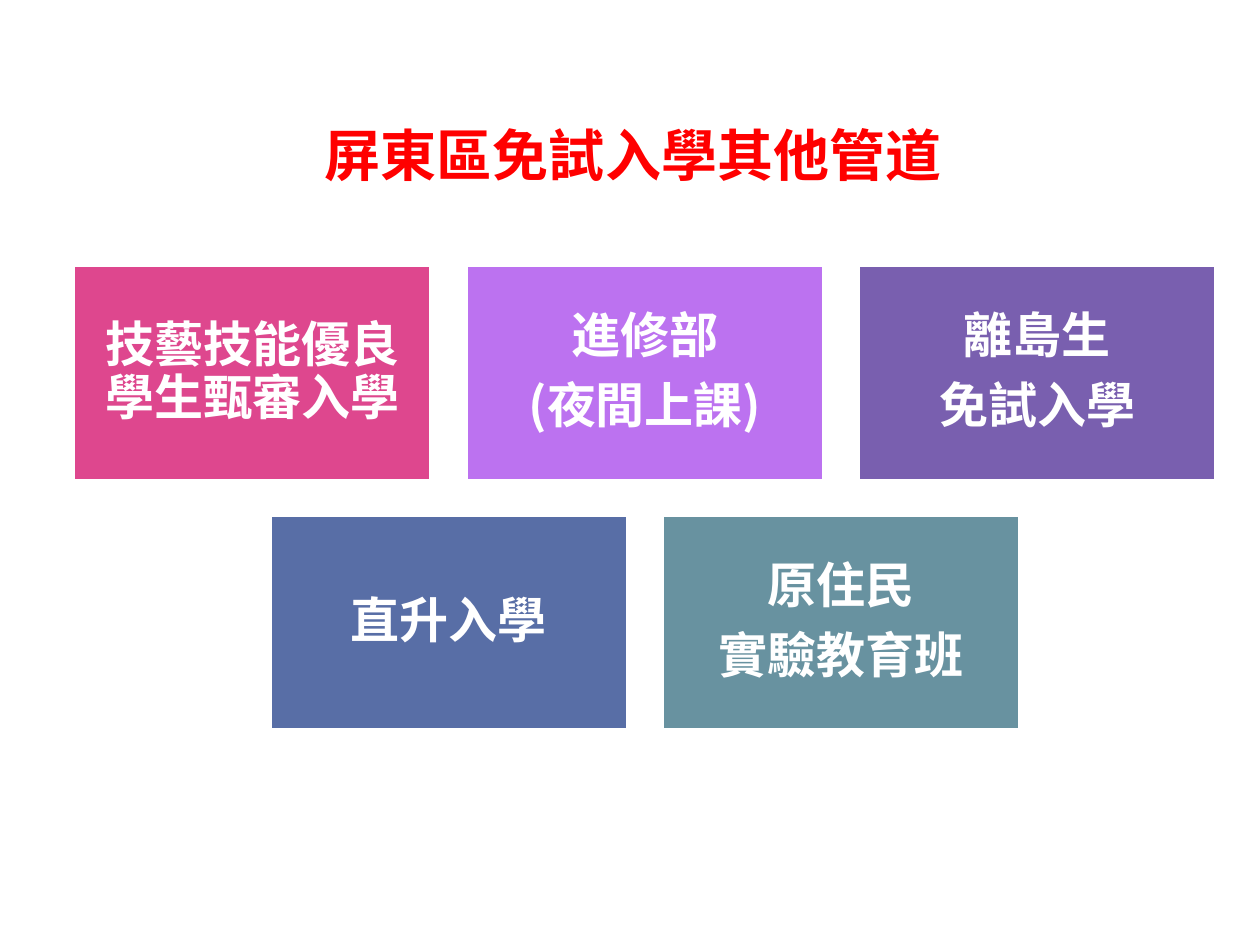
"""Build a slide listing the other exam-free admission channels."""
import pptx
import pptx.dml.color
import pptx.enum.shapes
import pptx.enum.text
import pptx.oxml
import pptx.oxml.ns
import pptx.util

Cm, Pt = pptx.util.Cm, pptx.util.Pt
ALIGN, ANCHOR = pptx.enum.text.PP_ALIGN, pptx.enum.text.MSO_ANCHOR

FONT = "Noto Sans CJK SC"
TITLE = "屏東區免試入學其他管道"
ROWS = [
    [
        (["技藝技能優良學生甄審入學"], "DE478E"),
        (["進修部", "(夜間上課)"], "BC72F0"),
        (["離島生", "免試入學"], "795FAF"),
    ],
    [
        (["直升入學"], "586EA6"),
        (["原住民", "實驗教育班"], "6892A0"),
    ],
]
CARD_W, CARD_H, GAP = 7.2, 4.32, 0.71
CENTER, TOP = 13.0, 5.36


def rgb(value):
    return pptx.dml.color.RGBColor.from_string(value)


def write(sp, lines, size, color, align, anchor, inset, spacing=1.0, after=0):
    tf = sp.text_frame
    tf.word_wrap = True
    tf.auto_size = pptx.enum.text.MSO_AUTO_SIZE.NONE
    tf.vertical_anchor = anchor
    tf.margin_left = tf.margin_right = Cm(inset[0])
    tf.margin_top = tf.margin_bottom = Cm(inset[1])
    for i, line in enumerate(lines):
        p = tf.add_paragraph() if i else tf.paragraphs[0]
        p.alignment = align
        p.line_spacing = spacing
        p.space_before, p.space_after = Pt(0), Pt(after)
        r = p.add_run()
        r.text = line
        r.font.size, r.font.bold, r.font.name = Pt(size), True, FONT
        r.font.color.rgb = rgb(color)
        ea = pptx.oxml.parse_xml(f'<a:ea {pptx.oxml.ns.nsdecls("a")} typeface="{FONT}"/>')
        r.font._element.find(pptx.oxml.ns.qn("a:latin")).addnext(ea)


def add_card(s, lines, fill, left, top):
    sp = s.shapes.add_shape(
        pptx.enum.shapes.MSO_SHAPE.RECTANGLE, Cm(left), Cm(top), Cm(CARD_W), Cm(CARD_H)
    )
    sp.shadow.inherit = False
    sp.fill.solid()
    sp.fill.fore_color.rgb = rgb(fill)
    sp.line.color.rgb = rgb("FFFFFF")
    sp.line.width = Pt(1.75)
    write(sp, lines, 28, "FFFFFF", ALIGN.CENTER, ANCHOR.MIDDLE, (0.3, 0.3), 0.9, 9.8)


def main():
    prs = pptx.Presentation()
    prs.slide_width, prs.slide_height = Cm(25.4), Cm(19.05)
    s = prs.slides.add_slide(prs.slide_layouts[5])
    title = s.shapes.title
    title.left, title.top, title.width, title.height = Cm(6.3), Cm(2.29), Cm(18.5), Cm(1.63)
    write(title, [TITLE], 32, "FF0000", ALIGN.LEFT, ANCHOR.TOP, (0.25, 0.13))
    for i, row in enumerate(ROWS):
        row_width = len(row) * CARD_W + (len(row) - 1) * GAP
        for j, (lines, fill) in enumerate(row):
            left = CENTER - row_width / 2 + j * (CARD_W + GAP)
            add_card(s, lines, fill, left, TOP + i * (CARD_H + GAP))
    prs.save("out.pptx")


if __name__ == "__main__":
    main()
